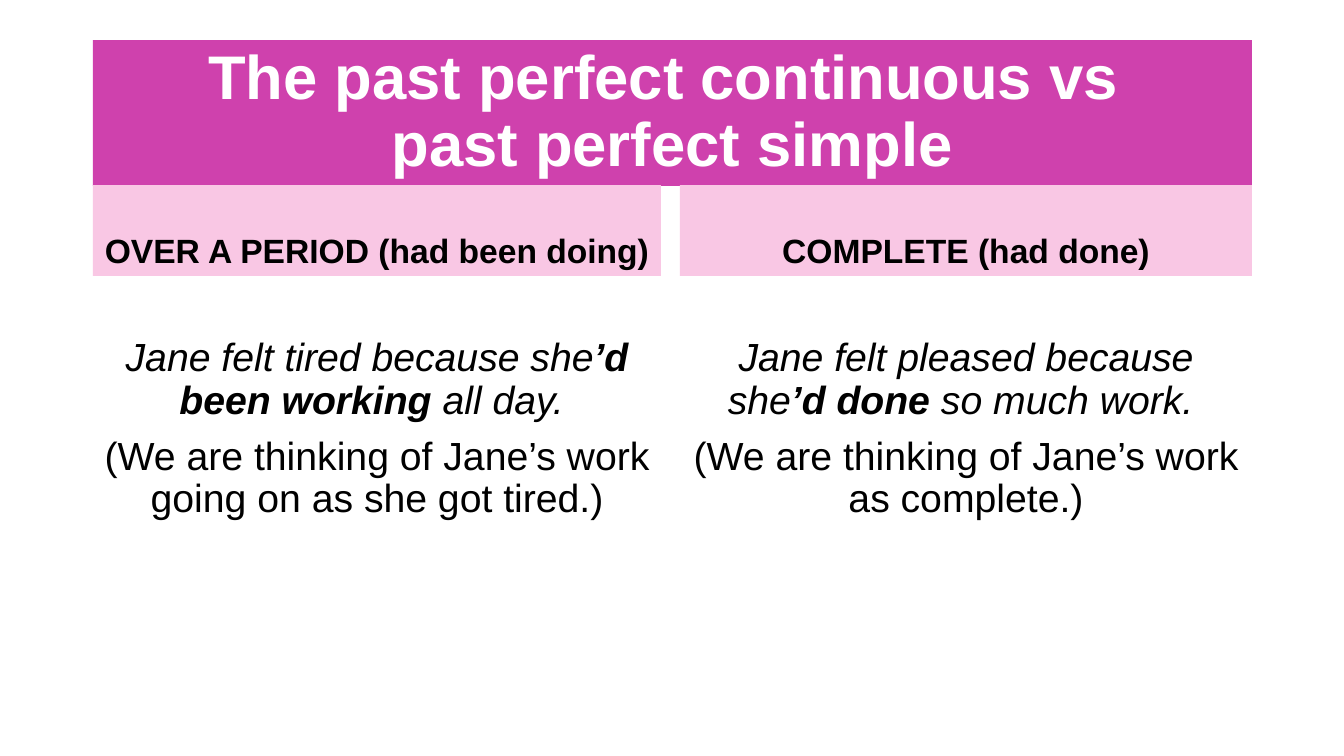
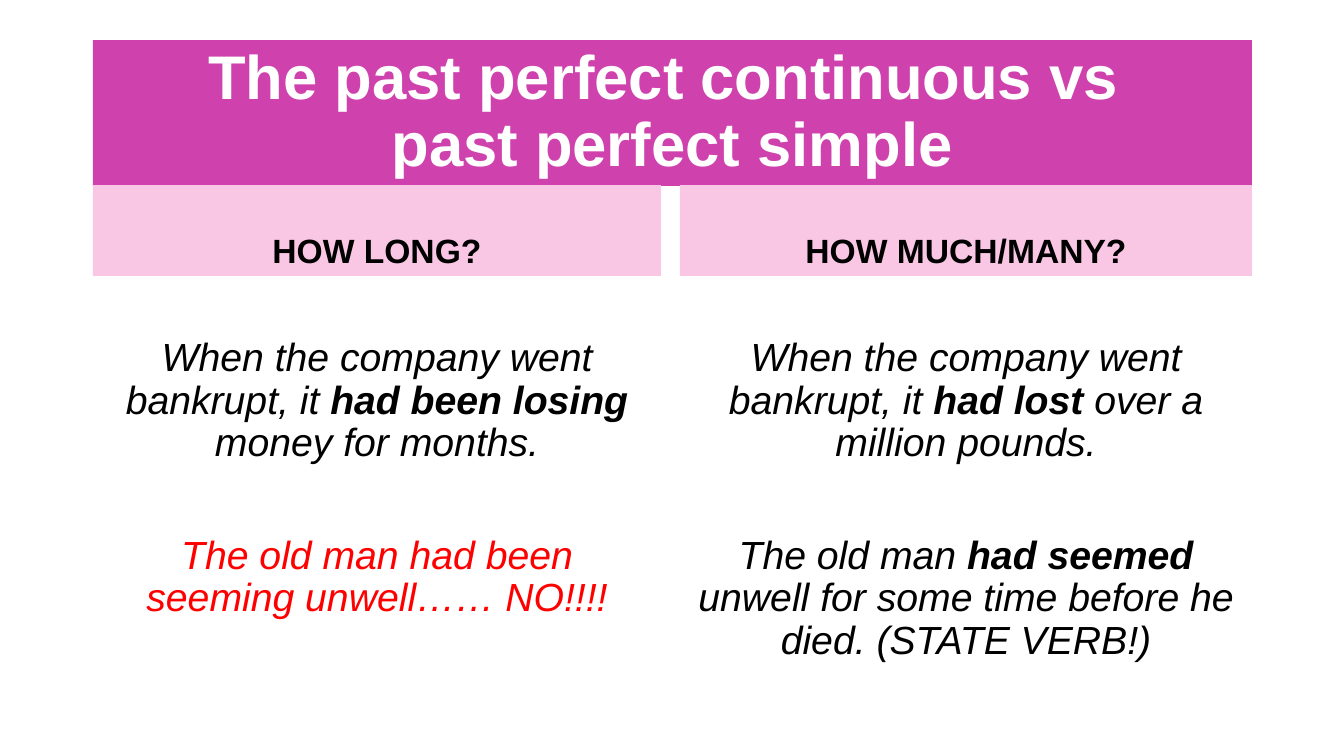
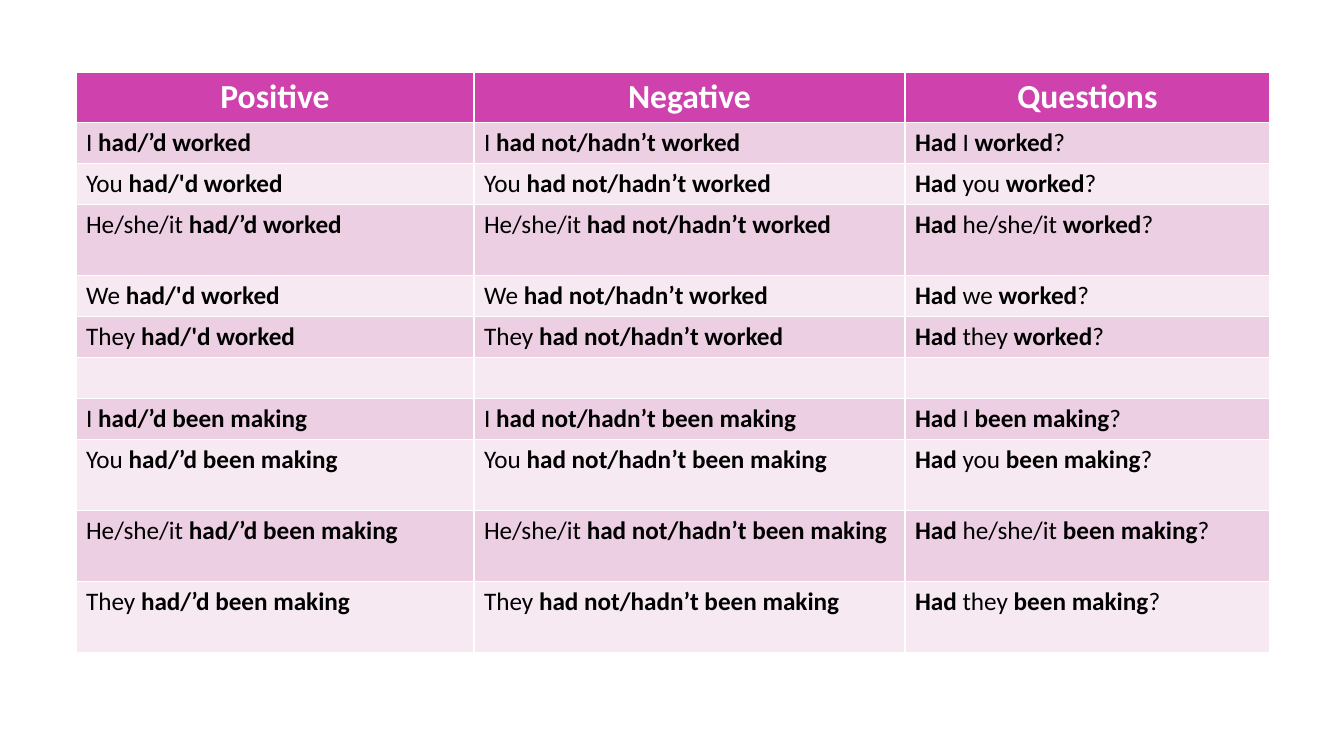
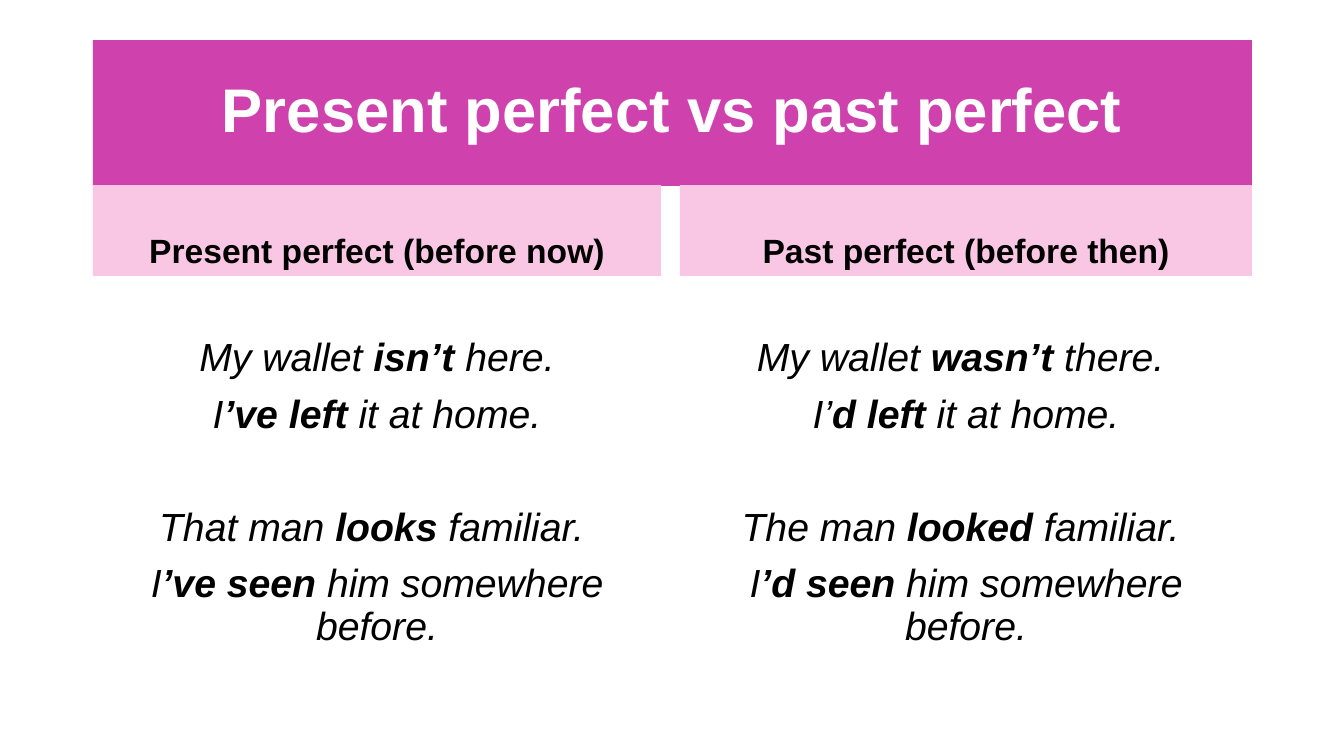
from pptx import Presentation
from pptx.dml.color import RGBColor
from pptx.enum.shapes import MSO_SHAPE
from pptx.enum.text import MSO_ANCHOR, MSO_AUTO_SIZE, PP_ALIGN
from pptx.util import Pt

PX = 914400 / 100.8
RECTANGLE = MSO_SHAPE.RECTANGLE
CENTER, LEFT = PP_ALIGN.CENTER, PP_ALIGN.LEFT
MIDDLE, BOTTOM = MSO_ANCHOR.MIDDLE, MSO_ANCHOR.BOTTOM
NO_AUTOFIT = MSO_AUTO_SIZE.NONE
TITLE_ONLY, BLANK = 5, 6

COLORS = {
    "magenta": "CF41AD",
    "pink": "F9C7E4",
    "band_dark": "EDCFE3",
    "band_light": "F6E9F1",
    "white": "FFFFFF",
    "black": "000000",
    "red": "FF0000",
}

# Space before an example: first in its box, next sentence, new group
FIRST, NEXT, GROUP = 0, 10, 50.5
# Example styles: italic, colour
EXAMPLE, NOTE, WRONG = (True, "black"), (False, "black"), (True, "red")

# Columns of the comparison slides: left, width
COLUMNS = [(93, 568), (680, 572)]


def paint(shape, color):
    shape.fill.solid()
    shape.fill.fore_color.rgb = RGBColor.from_string(COLORS[color])


def write(paragraph, text, size, color, font="Arial", bold=None, italic=False,
          align=CENTER):
    """Write text into a paragraph; parts between asterisks are bold."""
    paragraph.alignment = align
    paragraph.font.name = font
    paragraph.font.size = Pt(size)
    paragraph.font.italic = italic
    paragraph.font.bold = bold
    paragraph.font.color.rgb = RGBColor.from_string(COLORS[color])
    for index, part in enumerate(text.split("*")):
        if part:
            run = paragraph.add_run()
            run.text = part
            if bold is None:
                run.font.bold = index % 2 == 1


presentation = Presentation()
presentation.slide_width = round(1344 * PX)
presentation.slide_height = round(756 * PX)

# Comparison slides: title lines, then heading and examples of each column
CONTINUOUS_TITLE = ["The past perfect continuous vs ", "past perfect simple"]
PERIOD_SLIDE = (CONTINUOUS_TITLE, [
    ("OVER A PERIOD (had been doing)", [
        (FIRST, "Jane felt tired because she*’d been working *all day. ", EXAMPLE),
        (NEXT, "(We are thinking of Jane’s work going on as she got tired.)", NOTE),
    ]),
    ("COMPLETE (had done)", [
        (FIRST, "Jane felt pleased because she*’d done *so much work. ", EXAMPLE),
        (NEXT, "(We are thinking of Jane’s work as complete.)", NOTE),
    ]),
])
QUANTITY_SLIDE = (CONTINUOUS_TITLE, [
    ("HOW LONG?", [
        (FIRST, "When the company went bankrupt, it *had been losing *money for months.",
         EXAMPLE),
        (GROUP, "The old man had been seeming unwell…… NO!!!!", WRONG),
    ]),
    ("HOW MUCH/MANY?", [
        (FIRST, "When the company went bankrupt, it *had lost *over a million pounds.",
         EXAMPLE),
        (GROUP, "The old man *had seemed *unwell for some time before he died. "
                "(STATE VERB!)", EXAMPLE),
    ]),
])
PRESENT_SLIDE = (["Present perfect vs past perfect"], [
    ("Present perfect (before now)", [
        (FIRST, "My wallet *isn’t *here.", EXAMPLE),
        (NEXT, "I*’ve left *it at home.", EXAMPLE),
        (GROUP, "That man *looks *familiar. ", EXAMPLE),
        (NEXT, "I*’ve seen *him somewhere before.", EXAMPLE),
    ]),
    ("Past perfect (before then)", [
        (FIRST, "My wallet *wasn’t *there. ", EXAMPLE),
        (NEXT, "I’*d left *it at home.", EXAMPLE),
        (GROUP, "The man *looked *familiar. ", EXAMPLE),
        (NEXT, "I*’d seen *him somewhere before.", EXAMPLE),
    ]),
])

# Verb table: column widths, heading row, then subject, short form, verb, height
WIDTHS = [398, 431, 365]
HEADINGS = ["Positive", "Negative", "Questions"]
HEADING_HEIGHT, SHORT, TALL = 50, 41, 71
VERB_ROWS = [
    ("I", "’d", "worked", SHORT),
    ("You", "'d", "worked", SHORT),
    ("He/she/it", "’d", "worked", TALL),
    ("We", "'d", "worked", SHORT),
    ("They", "'d", "worked", SHORT),
    None,
    ("I", "’d", "been making", SHORT),
    ("You", "’d", "been making", TALL),
    ("He/she/it", "’d", "been making", TALL),
    ("They", "’d", "been making", TALL),
]

for content in [PERIOD_SLIDE, QUANTITY_SLIDE, None, PRESENT_SLIDE]:
    # Slide with the verb table
    if content is None:
        slide = presentation.slides.add_slide(presentation.slide_layouts[BLANK])
        heights = [HEADING_HEIGHT] + [row[3] if row else SHORT for row in VERB_ROWS]
        table = slide.shapes.add_table(
            len(heights), len(WIDTHS), round(76 * PX), round(72 * PX),
            round(sum(WIDTHS) * PX), round(sum(heights) * PX)).table
        for column, width in zip(table.columns, WIDTHS):
            column.width = round(width * PX)
        for row, height in zip(table.rows, heights):
            row.height = round(height * PX)

        for cell, heading in zip(table.rows[0].cells, HEADINGS):
            paint(cell, "magenta")
            write(cell.text_frame.paragraphs[0], heading, 24, "white", "Calibri",
                  bold=True)
        for index, verb_row in enumerate(VERB_ROWS):
            texts = [""] * len(WIDTHS)
            if verb_row:
                subject, short_form, verb, _ = verb_row
                asked = subject if subject == "I" else subject.lower()
                texts = [
                    f"{subject} *had/{short_form} {verb}*",
                    f"{subject} *had not/hadn’t {verb}*",
                    f"*Had* {asked} *{verb}*?",
                ]
            for cell, text in zip(table.rows[index + 1].cells, texts):
                paint(cell, "band_light" if index % 2 else "band_dark")
                write(cell.text_frame.paragraphs[0], text, 18, "black", "Calibri",
                      align=LEFT)
        continue

    # Title band
    title_lines, columns = content
    slide = presentation.slides.add_slide(presentation.slide_layouts[TITLE_ONLY])
    title = slide.shapes.title
    title.left, title.top = round(93 * PX), round(40 * PX)
    title.width, title.height = round(1159 * PX), round(146 * PX)
    paint(title, "magenta")
    title.text_frame.auto_size = NO_AUTOFIT
    title.text_frame.vertical_anchor = MIDDLE
    paragraph = title.text_frame.paragraphs[0]
    paragraph.line_spacing = 0.9
    for index, line in enumerate(title_lines):
        if index:
            paragraph.add_line_break()
        write(paragraph, line, 44, "white", bold=True)

    for (left, width), (heading, examples) in zip(COLUMNS, columns):
        # Column heading
        band = slide.shapes.add_shape(RECTANGLE, round(left * PX), round(185 * PX),
                                      round(width * PX), round(91 * PX))
        band.shadow.inherit = False
        band.line.fill.background()
        paint(band, "pink")
        band.text_frame.word_wrap = True
        band.text_frame.vertical_anchor = BOTTOM
        paragraph = band.text_frame.paragraphs[0]
        paragraph.line_spacing = 0.9
        write(paragraph, heading, 24, "black", bold=True)

        # Examples
        box = slide.shapes.add_textbox(round(left * PX), round(276 * PX),
                                       round(width * PX), round(406 * PX))
        frame = box.text_frame
        frame.word_wrap = True
        frame.margin_top = round(62 * PX)
        for index, (space, text, (italic, color)) in enumerate(examples):
            paragraph = frame.add_paragraph() if index else frame.paragraphs[0]
            paragraph.line_spacing = 0.9
            paragraph.space_before = Pt(space)
            write(paragraph, text, 28, color, italic=italic)

presentation.save("out.pptx")
